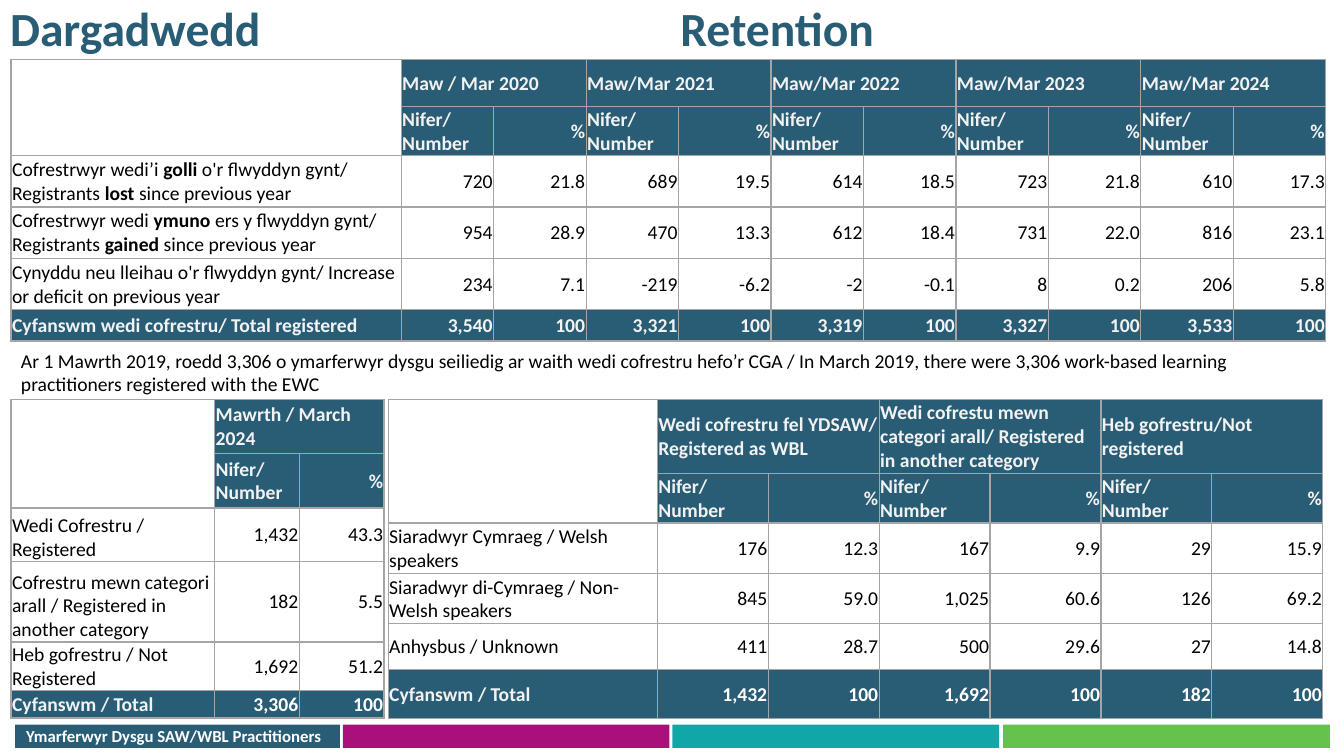
from dataclasses import dataclass

from lxml import etree
from pptx import Presentation
from pptx.dml.color import RGBColor
from pptx.enum.shapes import MSO_SHAPE as Shape
from pptx.enum.text import MSO_ANCHOR as Anchor, MSO_AUTO_SIZE as AutoSize, PP_ALIGN as Align
from pptx.oxml.ns import qn
from pptx.util import Inches, Pt

FONT = "Calibri"
NAVY, WHITE, PALE, BLACK, GREY = "295D75", "FFFFFF", "F2F2F2", "000000", "A5A5A5"


@dataclass
class Bar:
    left: float
    width: float
    color: str


@dataclass
class Caption:
    text: str
    left: float
    top: float
    width: float
    height: float
    size: float
    color: str
    bold: bool = True
    spacing: float = 0.9


@dataclass
class CountTable:
    left: float
    top: float
    label_width: float
    value_width: float
    heights: list[float]
    groups: list[str]
    rows: list[tuple[str, str]]  # label with *bold* words, then the values
    total_color: str = WHITE
    label_anchor: Anchor = Anchor.MIDDLE


BARS = [
    Bar(0.15, 3.22, NAVY),
    Bar(3.4, 3.24, "A8117C"),
    Bar(6.67, 3.24, "11A6A8"),
    Bar(9.95, 3.24, "65C24C"),
]
HEADING = Caption("Dargadwedd", 0, 0, 5.22, 0.51, 34, NAVY)
CAPTIONS = [
    Caption("Retention", 6.65, 0, 5.52, 0.51, 34, NAVY),
    Caption("Ar 1 Mawrth 2019, roedd 3,306 o ymarferwyr dysgu seiliedig ar waith wedi "
            "cofrestru hefo’r CGA / In March 2019, there were 3,306 work-based learning "
            "practitioners registered with the EWC",
            0.11, 3.41, 12.93, 0.57, 14, BLACK, bold=False, spacing=1.0),
    Caption("Ymarferwyr Dysgu SAW/WBL Practitioners", 0.16, 7.17, 3.34, 0.35, 12, WHITE),
]
TABLES = [
    CountTable(
        0.11, 0.59, 3.87, 0.917, [0.47, 0.48, 0.51, 0.51, 0.51, 0.31],
        ["Maw / Mar 2020", "Maw/Mar 2021", "Maw/Mar 2022", "Maw/Mar 2023", "Maw/Mar 2024"],
        [
            ("Cofrestrwyr wedi’i *golli *o'r flwyddyn gynt/ Registrants *lost* since previous year",
             "720 21.8 689 19.5 614 18.5 723 21.8 610 17.3"),
            ("Cofrestrwyr wedi *ymuno *ers y flwyddyn gynt/ Registrants *gained* since previous year",
             "954 28.9 470 13.3 612 18.4 731 22.0 816 23.1"),
            ("Cynyddu neu lleihau o'r flwyddyn gynt/ Increase or deficit on previous year",
             "234 7.1 -219 -6.2 -2 -0.1 8 0.2 206 5.8"),
            ("Cyfanswm wedi cofrestru/ Total registered",
             "3,540 100 3,321 100 3,319 100 3,327 100 3,533 100"),
        ],
        total_color=PALE,
    ),
    CountTable(
        3.85, 3.96, 2.67, 1.1, [0.74, 0.49, 0.5, 0.5, 0.45, 0.49],
        ["Wedi cofrestru fel YDSAW/ Registered as WBL",
         "Wedi cofrestu mewn categori arall/ Registered in another category",
         "Heb gofrestru/Not registered"],
        [
            ("Siaradwyr Cymraeg / Welsh speakers", "176 12.3 167 9.9 29 15.9"),
            ("Siaradwyr di-Cymraeg / Non-Welsh speakers", "845 59.0 1,025 60.6 126 69.2"),
            ("Anhysbus / Unknown", "411 28.7 500 29.6 27 14.8"),
            ("Cyfanswm / Total", "1,432 100 1,692 100 182 100"),
        ],
    ),
    CountTable(
        0.11, 3.96, 2.02, 0.84, [0.54, 0.54, 0.53, 0.8, 0.47, 0.27],
        ["Mawrth / March 2024"],
        [
            ("Wedi Cofrestru / Registered", "1,432 43.3"),
            ("Cofrestru mewn categori arall / Registered in another category", "182 5.5"),
            ("Heb gofrestru / Not Registered", "1,692 51.2"),
            ("Cyfanswm / Total", "3,306 100"),
        ],
        label_anchor=Anchor.BOTTOM,
    ),
]


def rgb(color: str) -> RGBColor:
    return RGBColor.from_string(color)


def style_font(font, size: float, color: str, bold: bool) -> None:
    font.name, font.size, font.bold = FONT, Pt(size), bold
    font.color.rgb = rgb(color)


def draw_bar(slide, bar: Bar) -> None:
    strip = slide.shapes.add_shape(
        Shape.RECTANGLE, Inches(bar.left), Inches(7.19), Inches(bar.width), Inches(0.23))
    strip.shadow.inherit = False
    strip.fill.solid()
    strip.fill.fore_color.rgb = rgb(bar.color)
    strip.line.fill.background()


def write_caption(box, caption: Caption) -> None:
    box.left, box.top = Inches(caption.left), Inches(caption.top)
    box.width, box.height = Inches(caption.width), Inches(caption.height)
    frame = box.text_frame
    frame.text = caption.text
    frame.word_wrap = True
    frame.auto_size = AutoSize.NONE
    frame.vertical_anchor = Anchor.TOP
    paragraph = frame.paragraphs[0]
    paragraph.alignment = Align.LEFT
    paragraph.line_spacing = caption.spacing
    style_font(paragraph.runs[0].font, caption.size, caption.color, caption.bold)


def add_borders(cell) -> None:
    properties = cell._tc.get_or_add_tcPr()
    for side in ("lnL", "lnR", "lnT", "lnB"):
        line = etree.SubElement(properties, qn(f"a:{side}"), w=str(Pt(1)))
        fill = etree.SubElement(line, qn("a:solidFill"))
        etree.SubElement(fill, qn("a:srgbClr"), val=GREY)


def write_cell(cell, text: str, color: str, bold: bool, align: Align, anchor: Anchor) -> None:
    cell.vertical_anchor = anchor
    paragraph = cell.text_frame.paragraphs[0]
    paragraph.alignment = align
    for index, piece in enumerate(text.split("*")):
        run = paragraph.add_run()
        run.text = piece
        style_font(run.font, 14, color, bold or index % 2 == 1)


def draw_table(slide, spec_table: CountTable) -> None:
    counts = spec_table
    widths = [counts.label_width] + [counts.value_width] * (2 * len(counts.groups))
    frame = slide.shapes.add_table(
        len(counts.heights), len(widths), Inches(counts.left), Inches(counts.top),
        Inches(sum(widths)), Inches(sum(counts.heights)))
    table = frame.table
    table.first_row = table.horz_banding = False
    for column, width in zip(table.columns, widths):
        column.width = Inches(width)
    for row, height in zip(table.rows, counts.heights):
        row.height = Inches(height)

    # Borders, margins and fills
    last = len(counts.heights) - 1
    for r, row in enumerate(table.rows):
        for c, cell in enumerate(row.cells):
            add_borders(cell)
            cell.margin_left = cell.margin_right = cell.margin_top = Inches(0.01)
            cell.margin_bottom = 0
            if r == last or (r < 2 and c > 0):
                cell.fill.solid()
                cell.fill.fore_color.rgb = rgb(NAVY)
            else:
                cell.fill.background()

    # Two header rows
    table.cell(0, 0).merge(table.cell(1, 0))
    for group, title in enumerate(counts.groups):
        c = 1 + 2 * group
        table.cell(0, c).merge(table.cell(0, c + 1))
        write_cell(table.cell(0, c), title, PALE, True, Align.LEFT, Anchor.MIDDLE)
        write_cell(table.cell(1, c), "Nifer/ Number", PALE, True, Align.LEFT, Anchor.MIDDLE)
        write_cell(table.cell(1, c + 1), "%", PALE, True, Align.RIGHT, Anchor.MIDDLE)

    # Counts and the total row
    for r, (label, values) in enumerate(counts.rows, start=2):
        total = r == last
        write_cell(table.cell(r, 0), label, PALE if total else BLACK, total, Align.LEFT,
                   Anchor.MIDDLE if total else counts.label_anchor)
        for c, value in enumerate(values.split(), start=1):
            write_cell(table.cell(r, c), value, counts.total_color if total else BLACK,
                       total, Align.RIGHT, Anchor.MIDDLE)


def main() -> None:
    deck = Presentation()
    deck.slide_width, deck.slide_height = Inches(13.33), Inches(7.5)
    slide = deck.slides.add_slide(deck.slide_layouts[5])
    write_caption(slide.shapes.title, HEADING)
    for bar in BARS:
        draw_bar(slide, bar)
    for counts in TABLES:
        draw_table(slide, counts)
    for caption in CAPTIONS:
        write_caption(slide.shapes.add_textbox(0, 0, 0, 0), caption)
    deck.save("out.pptx")


if __name__ == "__main__":
    main()
